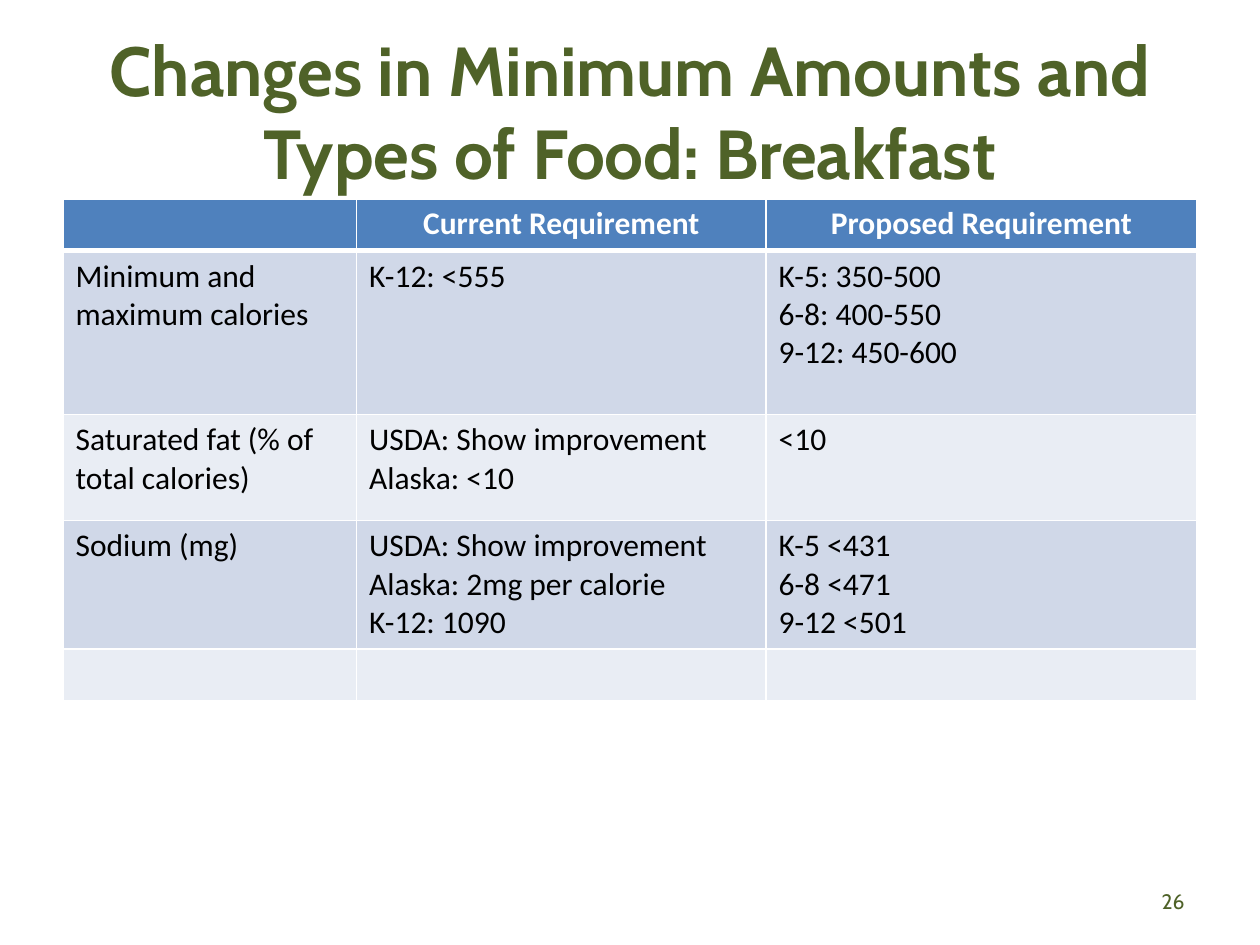
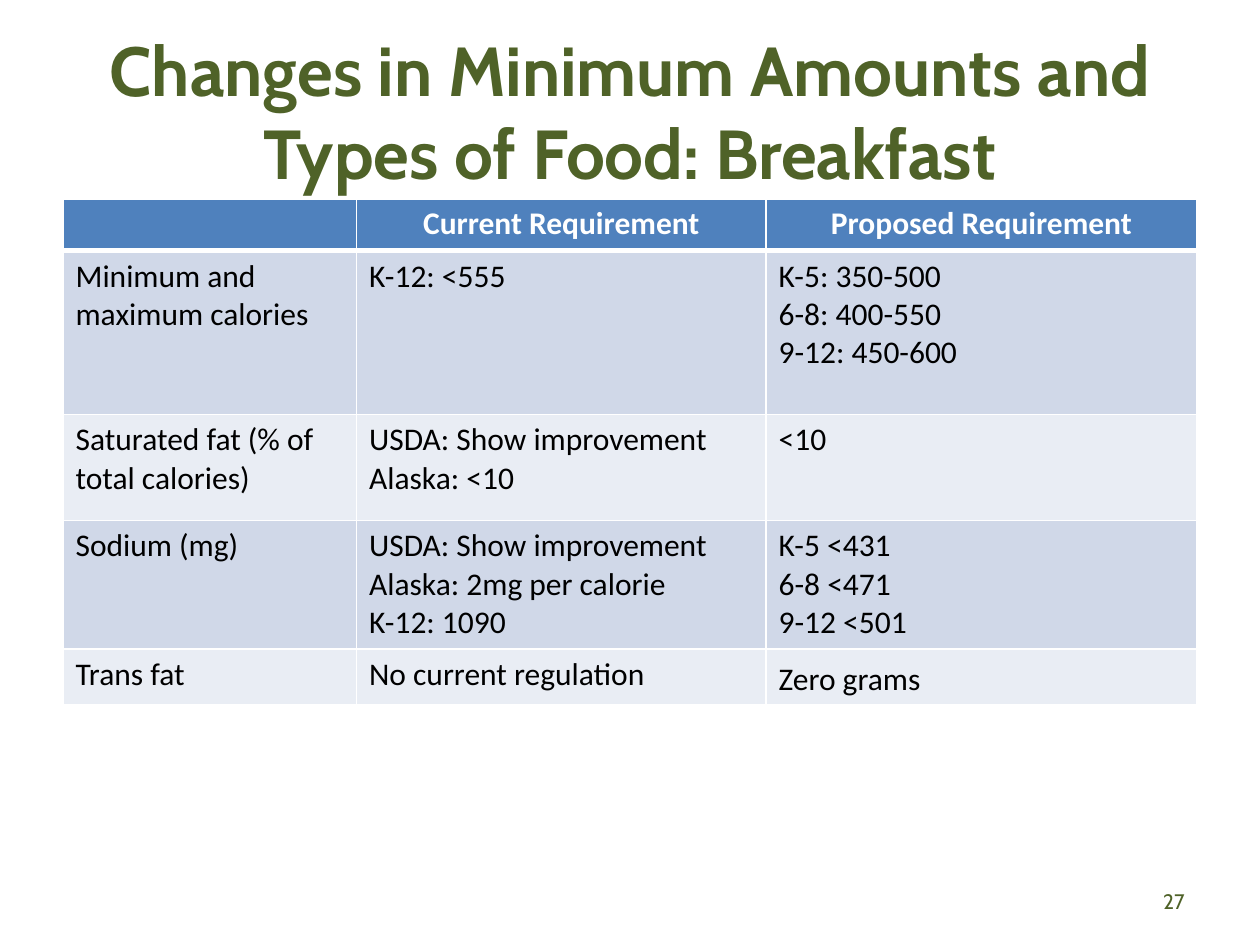
import pptx
import pptx.util
import pptx.dml.color
import pptx.enum.text
import lxml.etree
from dataclasses import dataclass
from pptx.oxml.ns import qn

Inches = pptx.util.Inches
Pt = pptx.util.Pt
ALIGN = pptx.enum.text.PP_ALIGN
MIDDLE = pptx.enum.text.MSO_ANCHOR.MIDDLE


@dataclass(frozen=True)
class Theme:
    green: str = "4F6228"
    header: str = "4F81BD"
    bands: tuple = ("D0D8E8", "E9EDF4")
    white: str = "FFFFFF"
    black: str = "000000"
    title_font: str = "Cabin"
    table_font: str = "Calibri"
    title_size: float = 39.6
    table_size: float = 18
    number_size: float = 12
    rule: float = 1
    header_rule: float = 3


THEME = Theme()

# Content
TITLE = "Changes in Minimum Amounts and Types of Food: Breakfast"
COLUMN_WIDTHS = (2.33, 3.25, 3.42)
ROW_HEIGHTS = (0.41, 1.3, 0.84, 1.02, 0.41)
REQUIREMENTS = [
    ("", "Current Requirement", "Proposed Requirement"),
    ("Minimum and maximum calories", "K-12: <555",
     "K-5: 350-500\n6-8: 400-550\n9-12: 450-600"),
    ("Saturated fat (% of total calories)",
     "USDA: Show improvement\nAlaska: <10", "<10"),
    ("Sodium (mg)",
     "USDA: Show improvement\nAlaska: 2mg per calorie\nK-12: 1090",
     "K-5 <431\n6-8 <471\n9-12 <501"),
]
NO_ENTRY = ("", "", "")
TRANS_FAT = ("Trans fat", "No current regulation", "Zero grams")


def rgb(color):
    return pptx.dml.color.RGBColor.from_string(color)


def style_text(tf, font, size, color, bold=False, align=ALIGN.LEFT):
    for p in tf.paragraphs:
        p.alignment = align
        for r in p.runs:
            r.font.name = font
            r.font.size = Pt(size)
            r.font.bold = bold
            r.font.color.rgb = rgb(color)


def add_text(s, box, text, size, bold, align):
    tf = s.shapes.add_textbox(*map(Inches, box)).text_frame
    tf.word_wrap = True
    tf.vertical_anchor = MIDDLE
    tf.text = text
    style_text(tf, THEME.title_font, size, THEME.green, bold, align)


def set_borders(cell, top, bottom):
    tc_pr = cell._tc.get_or_add_tcPr()
    widths = {"a:lnL": THEME.rule, "a:lnR": THEME.rule, "a:lnT": top, "a:lnB": bottom}
    for tag, width in widths.items():
        ln = lxml.etree.SubElement(tc_pr, qn(tag), w=str(Pt(width)))
        fill = lxml.etree.SubElement(ln, qn("a:solidFill"))
        lxml.etree.SubElement(fill, qn("a:srgbClr"), val=THEME.white)


def fill_cell(cell, text, row):
    is_header = row == 0
    # The heavy rule lies between the header and the first body row
    set_borders(cell,
                top=THEME.header_rule if row == 1 else THEME.rule,
                bottom=THEME.header_rule if is_header else THEME.rule)
    cell.fill.solid()
    cell.fill.fore_color.rgb = rgb(THEME.header if is_header else THEME.bands[(row - 1) % 2])
    if not text:
        return
    tf = cell.text_frame
    tf.text = text
    if is_header:
        cell.margin_left = cell.margin_right = Inches(0.07)
        cell.margin_top = cell.margin_bottom = 0
        style_text(tf, THEME.table_font, THEME.table_size, THEME.white, True, ALIGN.CENTER)
    else:
        style_text(tf, THEME.table_font, THEME.table_size, THEME.black)


def add_table(s, rows):
    table = s.shapes.add_table(len(rows), len(COLUMN_WIDTHS), Inches(0.5), Inches(1.58),
                               Inches(sum(COLUMN_WIDTHS)), Inches(sum(ROW_HEIGHTS))).table
    table.horz_banding = False
    for column, width in zip(table.columns, COLUMN_WIDTHS):
        column.width = Inches(width)
    for i, (row, height) in enumerate(zip(rows, ROW_HEIGHTS)):
        table.rows[i].height = Inches(height)
        for j, text in enumerate(row):
            fill_cell(table.cell(i, j), text, i)
    # Looser lines in the header and in the last proposed value
    for cell in (table.cell(0, 1), table.cell(0, 2), table.cell(len(rows) - 1, 2)):
        if cell.text:
            cell.text_frame.paragraphs[0].line_spacing = 1.15


def add_slide(prs, number, last_row):
    s = prs.slides.add_slide(prs.slide_layouts[6])
    add_text(s, (0.5, 0.25, 9, 1.25), TITLE, THEME.title_size, True, ALIGN.CENTER)
    add_table(s, REQUIREMENTS + [last_row])
    add_text(s, (7.17, 6.95, 2.33, 0.4), str(number), THEME.number_size, False, ALIGN.RIGHT)


def main():
    prs = pptx.Presentation()
    prs.slide_width, prs.slide_height = Inches(10), Inches(7.5)
    for number, last_row in enumerate((NO_ENTRY, TRANS_FAT), start=26):
        add_slide(prs, number, last_row)
    prs.save("out.pptx")


if __name__ == "__main__":
    main()
